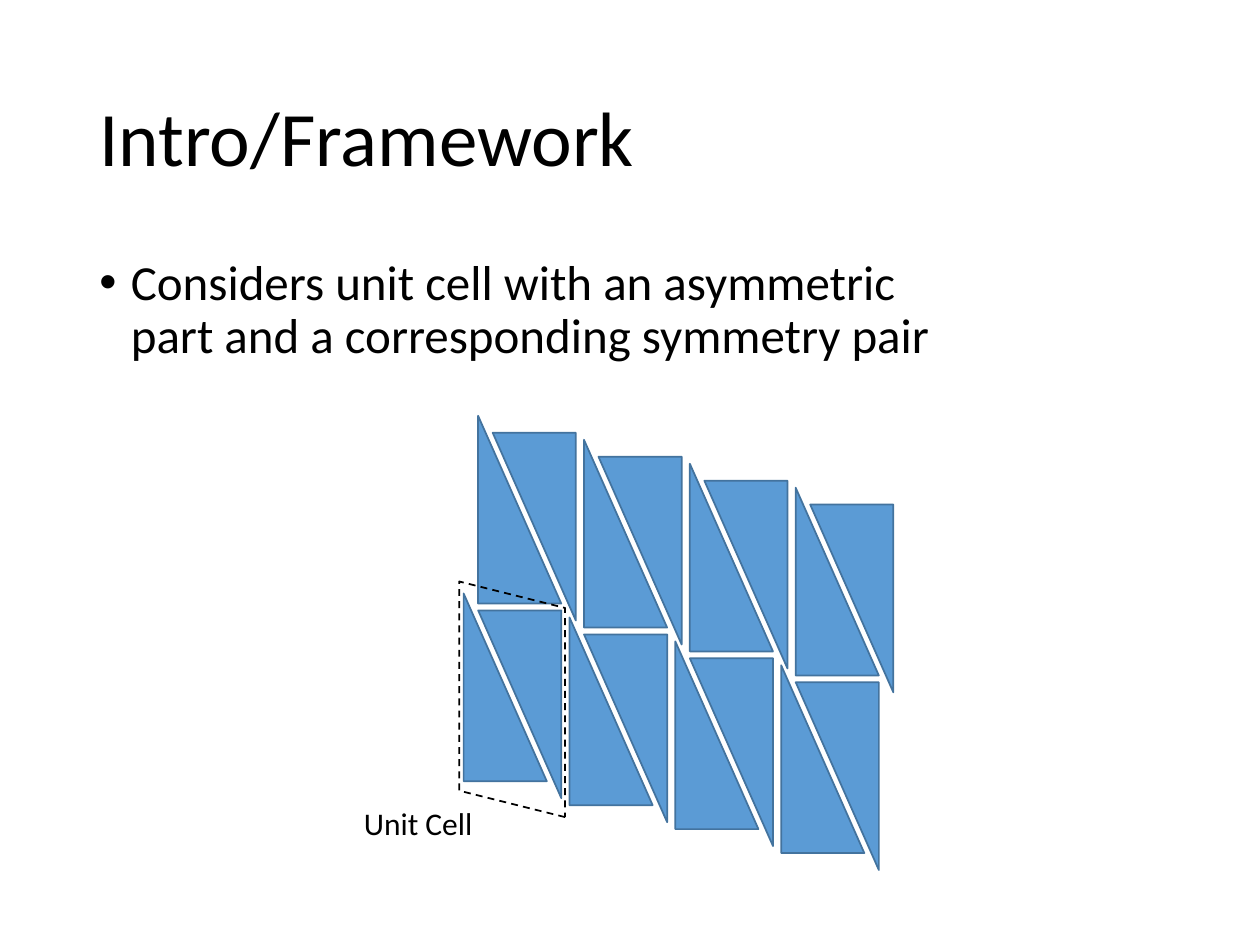
from pptx import Presentation
from pptx.util import Inches, Pt
from pptx.dml.color import RGBColor
from pptx.enum.dml import MSO_LINE_DASH_STYLE as Dash
from pptx.enum.shapes import MSO_SHAPE as Shape
from pptx.enum.text import MSO_ANCHOR as Anchor
from lxml.etree import SubElement
from pptx.oxml.ns import qn

BLACK = RGBColor(0x00, 0x00, 0x00)
BLUE = RGBColor(0x5B, 0x9B, 0xD5)
EDGE = RGBColor(0x43, 0x73, 0x9E)

# Content: text, box, size, anchor, line spacing, bullet
TEXTS = [
    ("Intro/Framework", (0.69, 0.4, 8.62, 1.45), 44, Anchor.MIDDLE, 0.9, None),
    ("Considers unit cell with an asymmetric part and a corresponding symmetry pair",
     (0.69, 2, 7.12, 4.76), 28, Anchor.TOP, 0.9, "•"),
    ("Unit Cell", (2.79, 6.33, 1.33, 0.4), 18, Anchor.TOP, 1.0, None),
]

# Lattice: start, column step, row step, offset of the symmetry mate
COLS, ROWS = 4, 2
START = (3.68, 4.71)
ACROSS = (0.84, 0.19)
UP = (0.115, -1.41)
MATE = (0.115, 0.135)
SIZE = (0.66, 1.49)
CELL = (3.13, 5.13, 1.87, 0.84)

prs = Presentation()
prs.slide_width, prs.slide_height = Inches(10), Inches(7.5)
slide = prs.slides.add_slide(prs.slide_layouts[6])


def add_text(text, box, size, anchor, space, mark):
    frame = slide.shapes.add_textbox(*map(Inches, box)).text_frame
    frame.word_wrap, frame.vertical_anchor = True, anchor
    para = frame.paragraphs[0]
    para.line_spacing = space
    run = para.add_run()
    run.text = text
    look = {"name": "Calibri", "size": Pt(size)}
    for key, value in look.items():
        setattr(run.font, key, value)
    run.font.color.rgb = BLACK
    if mark:
        para.space_before = Pt(10)
        props = para._p.get_or_add_pPr()
        props.set("marL", str(Inches(0.25)))
        props.set("indent", str(-Inches(0.25)))
        SubElement(props, qn("a:buFont"), typeface="Arial")
        SubElement(props, qn("a:buChar"), char=mark)


def add_form(kind, box, turn, line, fill=None):
    form = slide.shapes.add_shape(kind, *map(Inches, box))
    form.shadow.inherit = False
    form.rotation = turn
    if fill is None:
        form.fill.background()
    else:
        form.fill.solid()
        form.fill.fore_color.rgb = fill
    form.line.color.rgb = line
    form.line.width = Pt(1)
    return form


# Title, bullet and label
for item in TEXTS:
    add_text(*item)

# Triangle pairs, each with its half-turn mate
for col in range(COLS):
    for row in range(ROWS):
        spot = [s + col * a + row * u for s, a, u in zip(START, ACROSS, UP)]
        mate = [p + m for p, m in zip(spot, MATE)]
        for place, turn in ((spot, 0), (mate, 180)):
            add_form(Shape.RIGHT_TRIANGLE, (*place, *SIZE), turn, EDGE, BLUE)

# Unit cell outline
cell = add_form(Shape.PARALLELOGRAM, CELL, 270, BLACK)
cell.line.dash_style = Dash.DASH

prs.save("out.pptx")
